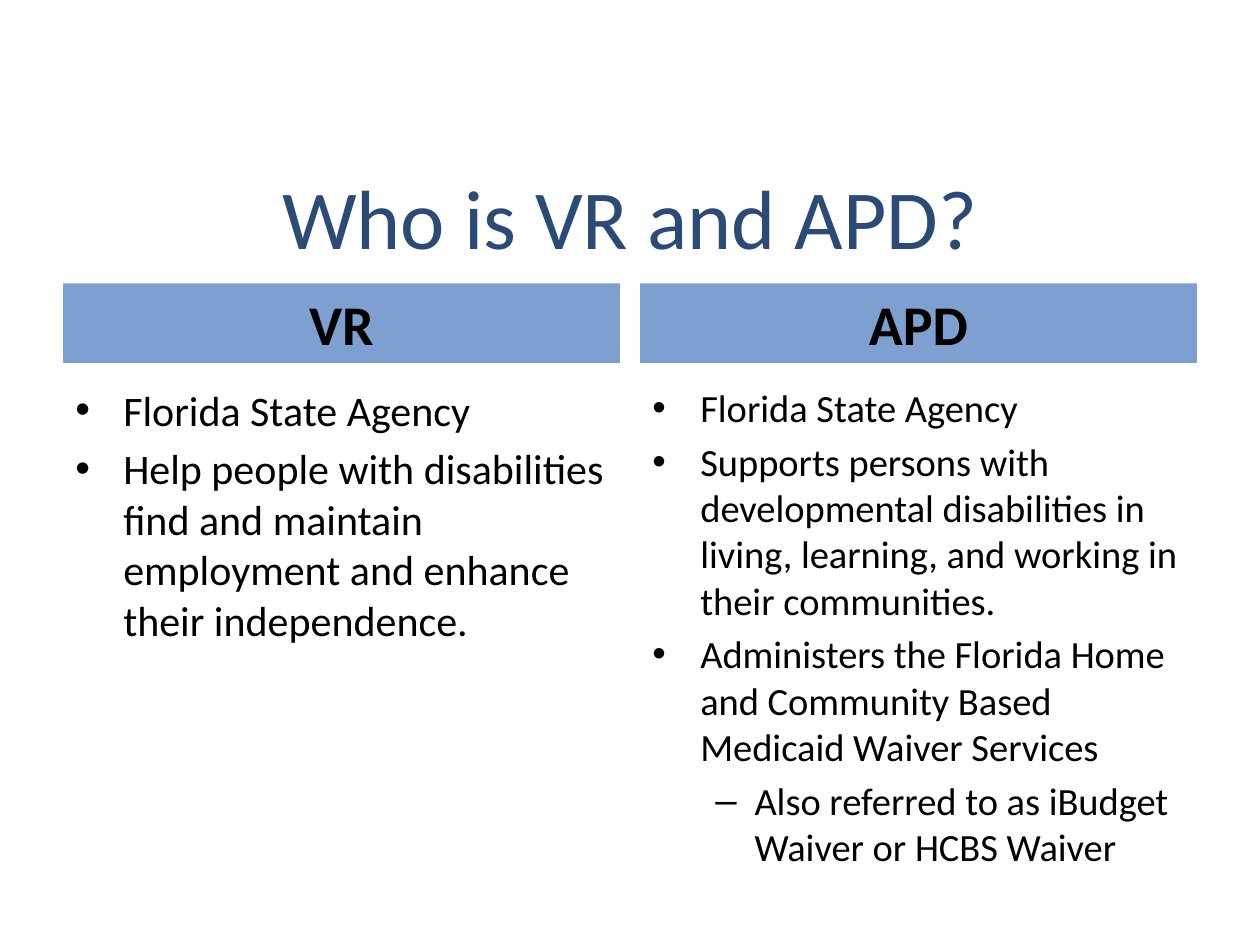
from lxml.etree import SubElement
from pptx import Presentation
from pptx.dml.color import RGBColor
from pptx.enum.shapes import MSO_SHAPE
from pptx.enum.text import MSO_ANCHOR, PP_ALIGN
from pptx.oxml.ns import qn
from pptx.util import Inches, Pt

FONT = "Calibri"
NAVY = RGBColor(0x2B, 0x4A, 0x76)
BLUE = RGBColor(0x7D, 0xA0, 0xD0)
BLACK = RGBColor(0, 0, 0)

PAGE_WIDTH, PAGE_HEIGHT = Inches(10), Inches(7.5)
MARGIN = Inches(0.5)
GUTTER = Inches(0.16)
COLUMN_WIDTH = (PAGE_WIDTH - 2 * MARGIN - GUTTER) // 2
TITLE_TOP, TITLE_HEIGHT = Inches(1.17), Inches(1.08)
COLUMN_TOP, COLUMN_HEIGHT = Inches(2.25), Inches(4.95)
HEADER_HEIGHT, BODY_OFFSET = Inches(0.63), Inches(0.75)

# Bullet character, left margin and hanging indent for each level
BULLETS = [("•", Inches(0.38), Inches(0.38)), ("–", Inches(0.81), Inches(0.31))]

# Heading, text size, (level, text) items
COLUMNS = [
    ("VR", 24, [
        (0, "Florida State Agency"),
        (0, "Help people with disabilities find and maintain employment "
            "and enhance their independence."),
    ]),
    ("APD", 22, [
        (0, "Florida State Agency"),
        (0, "Supports persons with developmental disabilities in living, "
            "learning, and working in their communities."),
        (0, "Administers the Florida Home and Community Based Medicaid "
            "Waiver Services"),
        (1, "Also referred to as iBudget Waiver or HCBS Waiver"),
    ]),
]


def set_font(para, size, color, bold=False):
    para.font.name = FONT
    para.font.size = Pt(size)
    para.font.color.rgb = color
    para.font.bold = bold


def set_bullet(para, level):
    char, margin, hanging = BULLETS[level]
    para.level = level
    properties = para._p.get_or_add_pPr()
    properties.set("marL", str(margin))
    properties.set("indent", str(-hanging))
    SubElement(properties, qn("a:buFont"), typeface="Arial")
    SubElement(properties, qn("a:buChar"), char=char)


def fill_line(shape, text, size, color, anchor, bold=False):
    """Put one centred line of text in a shape."""
    frame = shape.text_frame
    frame.word_wrap = True
    frame.vertical_anchor = anchor
    para = frame.paragraphs[0]
    para.text = text
    para.alignment = PP_ALIGN.CENTER
    set_font(para, size, color, bold)


def add_title(page, left, top, width, height, text):
    box = page.shapes.add_textbox(left, top, width, height)
    fill_line(box, text, 48, NAVY, MSO_ANCHOR.MIDDLE)


def add_column(page, left, top, width, height, heading, size, items):
    header = page.shapes.add_shape(
        MSO_SHAPE.RECTANGLE, left, top, width, HEADER_HEIGHT)
    header.shadow.inherit = False
    header.fill.solid()
    header.fill.fore_color.rgb = BLUE
    header.line.fill.background()
    fill_line(header, heading, 32, BLACK, MSO_ANCHOR.BOTTOM, bold=True)

    body = page.shapes.add_textbox(
        left, top + BODY_OFFSET, width, height - BODY_OFFSET)
    frame = body.text_frame
    frame.word_wrap = True
    for index, (level, text) in enumerate(items):
        para = frame.add_paragraph() if index else frame.paragraphs[0]
        para.text = text
        if index:
            para.space_before = Pt(size * 0.2)
        set_bullet(para, level)
        set_font(para, size, BLACK)


def main():
    deck = Presentation()
    deck.slide_width, deck.slide_height = PAGE_WIDTH, PAGE_HEIGHT
    page = deck.slides.add_slide(deck.slide_layouts[6])
    add_title(page, MARGIN, TITLE_TOP, PAGE_WIDTH - 2 * MARGIN, TITLE_HEIGHT,
              "Who is VR and APD?")
    for index, column in enumerate(COLUMNS):
        left = MARGIN + index * (COLUMN_WIDTH + GUTTER)
        add_column(page, left, COLUMN_TOP, COLUMN_WIDTH, COLUMN_HEIGHT, *column)
    deck.save("out.pptx")


if __name__ == "__main__":
    main()
